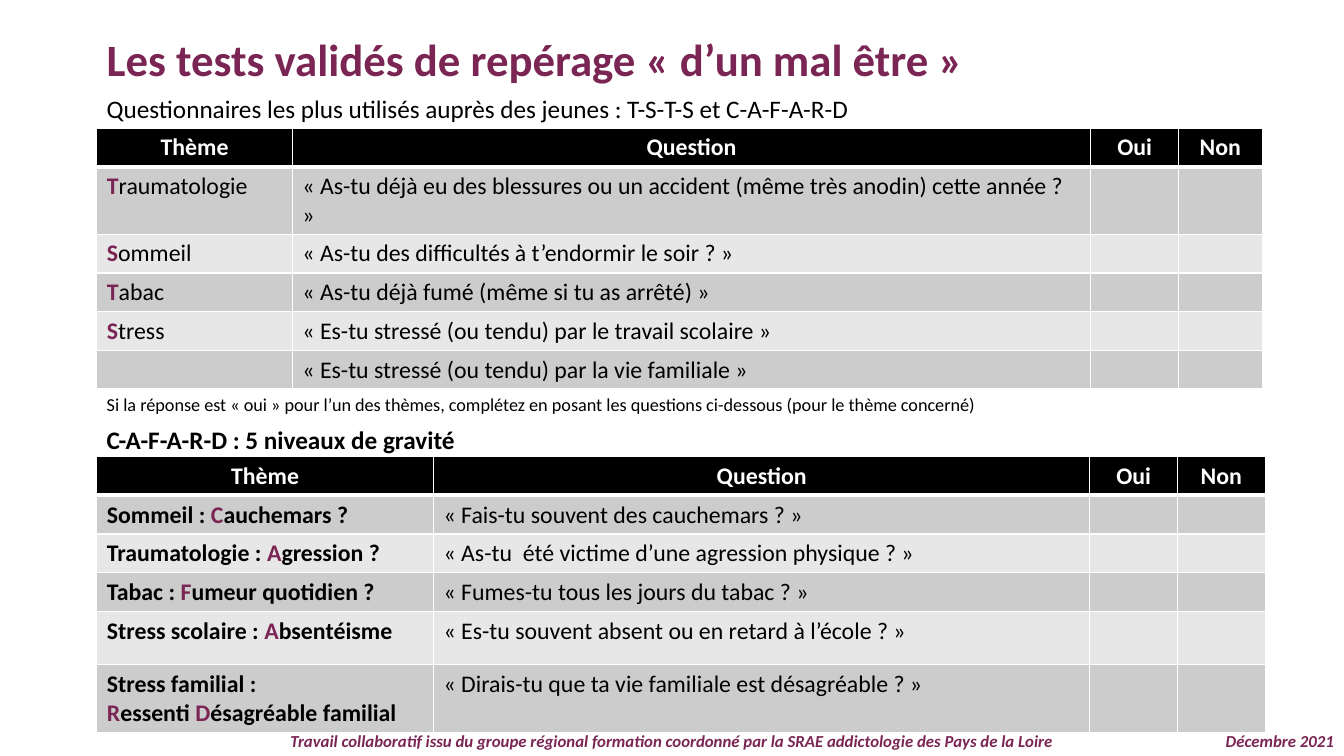
from lxml import etree
from pptx import Presentation
from pptx.dml.color import RGBColor
from pptx.enum.lang import MSO_LANGUAGE_ID
from pptx.enum.text import MSO_ANCHOR, PP_ALIGN
from pptx.oxml.ns import qn
from pptx.util import Inches, Pt

LEFT, CENTER, RIGHT = PP_ALIGN.LEFT, PP_ALIGN.CENTER, PP_ALIGN.RIGHT
TOP, MIDDLE = MSO_ANCHOR.TOP, MSO_ANCHOR.MIDDLE
FRENCH = MSO_LANGUAGE_ID.FRENCH

# Content: letters between asterisks take the accent colour
HEADER = ["Thème", "Question", "Oui", "Non"]
SCREENING = [
    ("*T*raumatologie", "« As-tu déjà eu des blessures ou un accident (même très anodin) cette année ? »"),
    ("*S*ommeil", "« As-tu des difficultés à t’endormir le soir ? »"),
    ("*T*abac", "« As-tu déjà fumé (même si tu as arrêté) »"),
    ("*S*tress", "« Es-tu stressé (ou tendu) par le travail scolaire »"),
    ("", "« Es-tu stressé (ou tendu) par la vie familiale »"),
]
SEVERITY = [
    ("Sommeil : *C*auchemars ?", "« Fais-tu souvent des cauchemars ? »"),
    ("Traumatologie : *A*gression ?", "« As-tu  été victime d’une agression physique ? »"),
    ("Tabac : *F*umeur quotidien ?", "« Fumes-tu tous les jours du tabac ? »"),
    ("Stress scolaire : *A*bsentéisme", "« Es-tu souvent absent ou en retard à l’école ? »"),
    ("Stress familial : \n*R*essenti *D*ésagréable familial", "« Dirais-tu que ta vie familiale est désagréable ? »"),
]

# Layout in inches, sizes in points
WIDTH, HEIGHT = 13.33, 7.5
MARGIN, TEXT_WIDTH = 0.96, 12.19
FOOTER_TOP, FOOTER_HEIGHT = 7.2, 0.3
DATE_WIDTH = 1.56
ROW, TALL_ROW = 0.38, 0.67
TABLE_SIZE = 17
FONT = "Calibri"
ACCENT, BLACK, WHITE = "7A2553", "000000", "FFFFFF"
BANDS = ["CCCCCC", "E7E7E7"]

# (text, top, width, height, size, bold, colour)
TEXTS = [
    ("Questionnaires les plus utilisés auprès des jeunes : T-S-T-S et C-A-F-A-R-D",
     0.88, TEXT_WIDTH, 0.4, 18, False, BLACK),
    ("Les tests validés de repérage « d’un mal être »", 0.27, 11.61, 0.64, 32, True, ACCENT),
    ("C-A-F-A-R-D : 5 niveaux de gravité", 4.16, TEXT_WIDTH, 0.4, 18, True, BLACK),
    ("Si la réponse est « oui » pour l’un des thèmes, complétez en posant les questions "
     "ci-dessous (pour le thème concerné)", 3.85, TEXT_WIDTH, 0.32, 13, False, BLACK),
]
# (text, left, width, alignment)
FOOTERS = [
    ("Travail collaboratif issu du groupe régional formation coordonné par la SRAE "
     "addictologie des Pays de la Loire", 0, WIDTH, CENTER),
    ("Décembre 2021", WIDTH - DATE_WIDTH, DATE_WIDTH, RIGHT),
]
# (rows, top, column widths, row heights, bold themes)
TABLES = [
    (SCREENING, 1.27, [1.94, 7.92, 0.87, 0.83], [ROW, TALL_ROW] + [ROW] * 4, False),
    (SEVERITY, 4.53, [3.34, 6.51, 0.87, 0.87], [ROW] * 4 + [0.53, TALL_ROW], True),
]


def color(value):
    return RGBColor.from_string(value)


def add_run(paragraph, text, size, bold, value, italic=False):
    run = paragraph.add_run()
    run.text = text
    font = run.font
    font.name, font.size, font.bold, font.italic = FONT, Pt(size), bold, italic
    font.language_id = FRENCH
    font.color.rgb = color(value)


def add_text(slide, text, left, top, width, height, size, bold, value,
             italic=False, alignment=LEFT, anchor=TOP):
    box = slide.shapes.add_textbox(Inches(left), Inches(top), Inches(width), Inches(height))
    frame = box.text_frame
    frame.word_wrap = True
    frame.vertical_anchor = anchor
    paragraph = frame.paragraphs[0]
    paragraph.alignment = alignment
    add_run(paragraph, text, size, bold, value, italic)


def set_borders(cell, top, bottom):
    properties = cell._tc.get_or_add_tcPr()
    for side, points in (("L", 1), ("R", 1), ("T", top), ("B", bottom)):
        line = etree.SubElement(properties, qn(f"a:ln{side}"), w=str(Pt(points)))
        fill = etree.SubElement(line, qn("a:solidFill"))
        etree.SubElement(fill, qn("a:srgbClr"), val=WHITE)


def fill_cell(cell, text, bold, value):
    paragraph = cell.text_frame.paragraphs[0]
    if not text:
        # Keeps an empty cell from stretching its row
        etree.SubElement(paragraph._p, qn("a:endParaRPr"), sz=str(TABLE_SIZE * 100))
    for line_number, line in enumerate(text.split("\n")):
        if line_number:
            paragraph.add_line_break()
        for index, part in enumerate(line.split("*")):
            accented = index % 2 == 1
            if part:
                add_run(paragraph, part, TABLE_SIZE, bold or accented, ACCENT if accented else value)
    return paragraph


def add_question_table(slide, rows, top, columns, heights, bold_themes):
    frame = slide.shapes.add_table(len(heights), len(columns), Inches(MARGIN), Inches(top),
                                   Inches(sum(columns)), Inches(sum(heights)))
    table = frame.table
    for column, width in zip(table.columns, columns):
        column.width = Inches(width)
    for row, height in zip(table.rows, heights):
        row.height = Inches(height)
    for r, texts in enumerate([HEADER] + [(*row, "", "") for row in rows]):
        is_header = r == 0
        for c, text in enumerate(texts):
            cell = table.cell(r, c)
            set_borders(cell, 3 if r == 1 else 1, 3 if is_header else 1)
            cell.fill.solid()
            cell.fill.fore_color.rgb = color(BLACK if is_header else BANDS[(r - 1) % 2])
            bold = is_header or (bold_themes and c == 0)
            paragraph = fill_cell(cell, text, bold, WHITE if is_header else BLACK)
            if is_header:
                paragraph.alignment = CENTER


def main():
    presentation = Presentation()
    presentation.slide_width, presentation.slide_height = Inches(WIDTH), Inches(HEIGHT)
    slide = presentation.slides.add_slide(presentation.slide_layouts[6])

    # Footer
    for text, left, width, alignment in FOOTERS:
        add_text(slide, text, left, FOOTER_TOP, width, FOOTER_HEIGHT, 12, True, ACCENT,
                 italic=True, alignment=alignment, anchor=MIDDLE)

    # Tables, then title and captions
    for table in TABLES:
        add_question_table(slide, *table)
    for text, *place_and_style in TEXTS:
        add_text(slide, text, MARGIN, *place_and_style)

    presentation.save("out.pptx")


if __name__ == "__main__":
    main()
